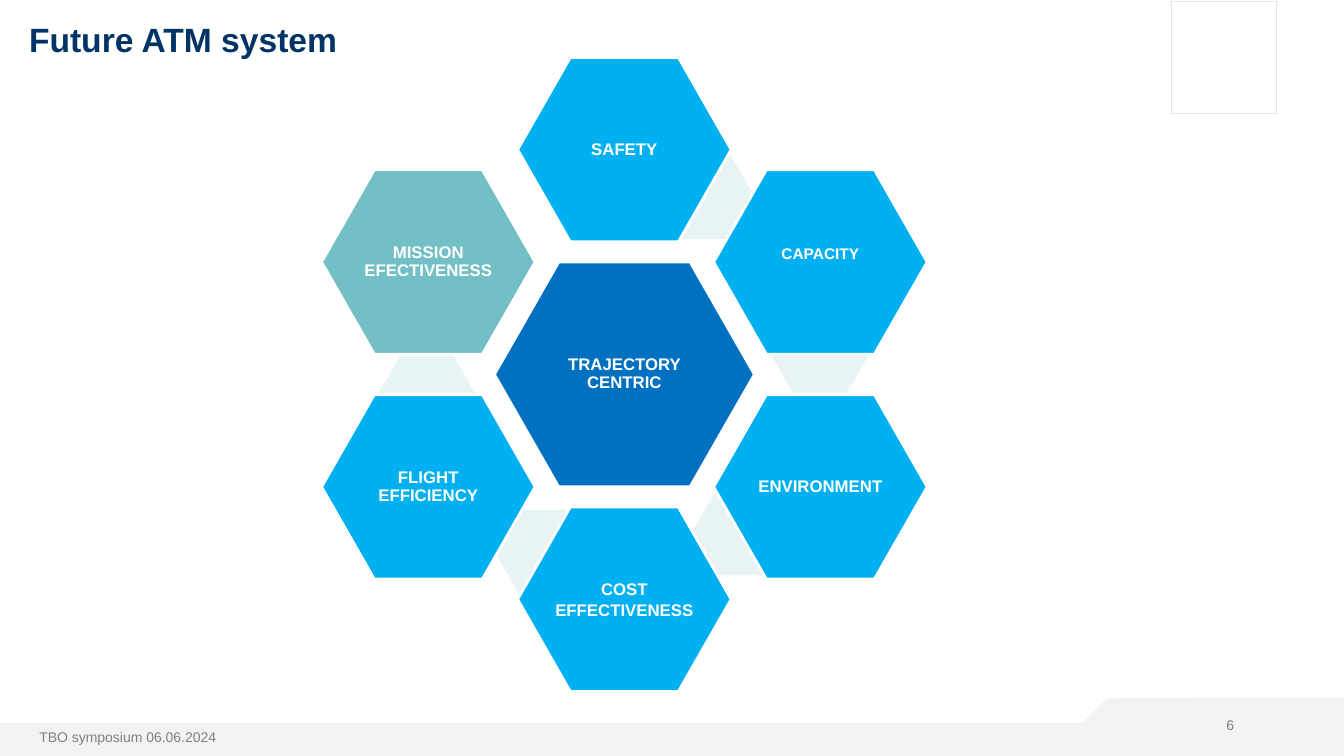
from math import cos, radians, sin

from pptx import Presentation
from pptx.dml.color import RGBColor
from pptx.enum.shapes import MSO_SHAPE as Preset
from pptx.enum.text import MSO_ANCHOR as Anchor, PP_ALIGN as Align
from pptx.util import Pt

BLUE, DEEP_BLUE, TEAL, PALE = "00B0F0", "0070C0", "72BFC5", "E7F3F4"
WHITE, GREY, FOOTER_GREY, NAVY = "FFFFFF", "808080", "F2F2F2", "003366"
CENTER_X, CENTER_Y = 446, 267.5
RADIUS_X, RADIUS_Y = 161.7, 160.6
GOAL_EXTENT = (152.6, 131.8)
LINK_EXTENT = (69.8, 60.5)

GOALS = [
    ("SAFETY", 0, BLUE, (469.4, 110.2), {}),
    ("CAPACITY", 60, BLUE, (550.8, 223.2), {"size": 11, "spacing": 1, "bottom": 12}),
    ("ENVIRONMENT", 120, BLUE, (493.9, 350.6), {}),
    ("COST EFFECTIVENESS", 180, BLUE, (353.5, 364.3), {"spacing": 1}),
    ("FLIGHT EFFICIENCY", 240, BLUE, (270, 251.3), {}),
    ("MISSION EFECTIVENESS", 300, TEAL, None, {}),
]


def color(hex_code):
    return RGBColor.from_string(hex_code)


def paint(shape, fill, line=None, width=0):
    shape.shadow.inherit = False
    shape.fill.solid()
    shape.fill.fore_color.rgb = color(fill)
    if line:
        shape.line.color.rgb = color(line)
        shape.line.width = Pt(width)
    else:
        shape.line.fill.background()


def write(shape, text, size=12, ink=WHITE, bold=False, align=Align.LEFT,
          spacing=1.0, left=0, right=0, top=0, bottom=0):
    frame = shape.text_frame
    frame.word_wrap = True
    frame.vertical_anchor = Anchor.MIDDLE
    frame.margin_left, frame.margin_right = Pt(left), Pt(right)
    frame.margin_top, frame.margin_bottom = Pt(top), Pt(bottom)
    paragraph = frame.paragraphs[0]
    paragraph.alignment = align
    paragraph.line_spacing = float(spacing)
    run = paragraph.add_run()
    run.text = text
    run.font.name = "Arial"
    run.font.size = Pt(size)
    run.font.bold = bold
    run.font.color.rgb = color(ink)


def add_preset(slide, preset, box, fill, line=None, width=0):
    shape = slide.shapes.add_shape(preset, *map(Pt, box))
    paint(shape, fill, line, width)
    return shape


def add_label(slide, text, box, **style):
    write(slide.shapes.add_textbox(*map(Pt, box)), text, **style)


def add_link(slide, corner):
    link = add_preset(slide, Preset.HEXAGON, (*corner, *LINK_EXTENT), PALE)
    link.adjustments[0] = 0.289


def add_goal(slide, text, center, extent, fill, **style):
    x, y = center
    width, height = extent
    box = (x - width / 2, y - height / 2, width, height)
    goal = add_preset(slide, Preset.HEXAGON, box, fill, WHITE, 2)
    goal.adjustments[0] = 0.286
    write(goal, text, **{"bold": True, "align": Align.CENTER, "spacing": 0.9, **style})


def add_footer(slide):
    add_preset(slide, Preset.RECTANGLE, (0, 516.4, 960, 23.6), FOOTER_GREY)
    outline = slide.shapes.build_freeform(Pt(771.8), Pt(517.7))
    corners = [(960, 518.4), (960, 498.2), (790.6, 498.8)]
    outline.add_line_segments([(Pt(x), Pt(y)) for x, y in corners], close=True)
    paint(outline.convert_to_shape(), FOOTER_GREY)


def main():
    deck = Presentation()
    deck.slide_width, deck.slide_height = Pt(960), Pt(540)
    slide = deck.slides.add_slide(deck.slide_layouts[6])

    add_footer(slide)
    add_preset(slide, Preset.RECTANGLE, (836.6, 0.7, 75, 80), WHITE, "E6E6E6", 0.25)
    add_label(slide, "TBO symposium 06.06.2024", (28.1, 512.6, 139, 27.4),
              size=10, ink=GREY, right=7.2, top=3.6, bottom=3.6)
    add_label(slide, "Future ATM system", (13.7, 5, 254.9, 46.1),
              size=24, ink=NAVY, bold=True, left=7.2, right=7.2)
    add_label(slide, "6", (688.3, 499.7, 200.2, 36),
              size=10, ink=GREY, align=Align.RIGHT, left=7.2, right=7.2)

    add_goal(slide, "TRAJECTORY CENTRIC", (CENTER_X, CENTER_Y), (185.8, 160.6), DEEP_BLUE)
    for text, degrees, fill, link_corner, style in GOALS:
        if link_corner:
            add_link(slide, link_corner)
        angle = radians(degrees)
        center = (CENTER_X + RADIUS_X * sin(angle), CENTER_Y - RADIUS_Y * cos(angle))
        add_goal(slide, text, center, GOAL_EXTENT, fill, **style)

    deck.save("out.pptx")


if __name__ == "__main__":
    main()
